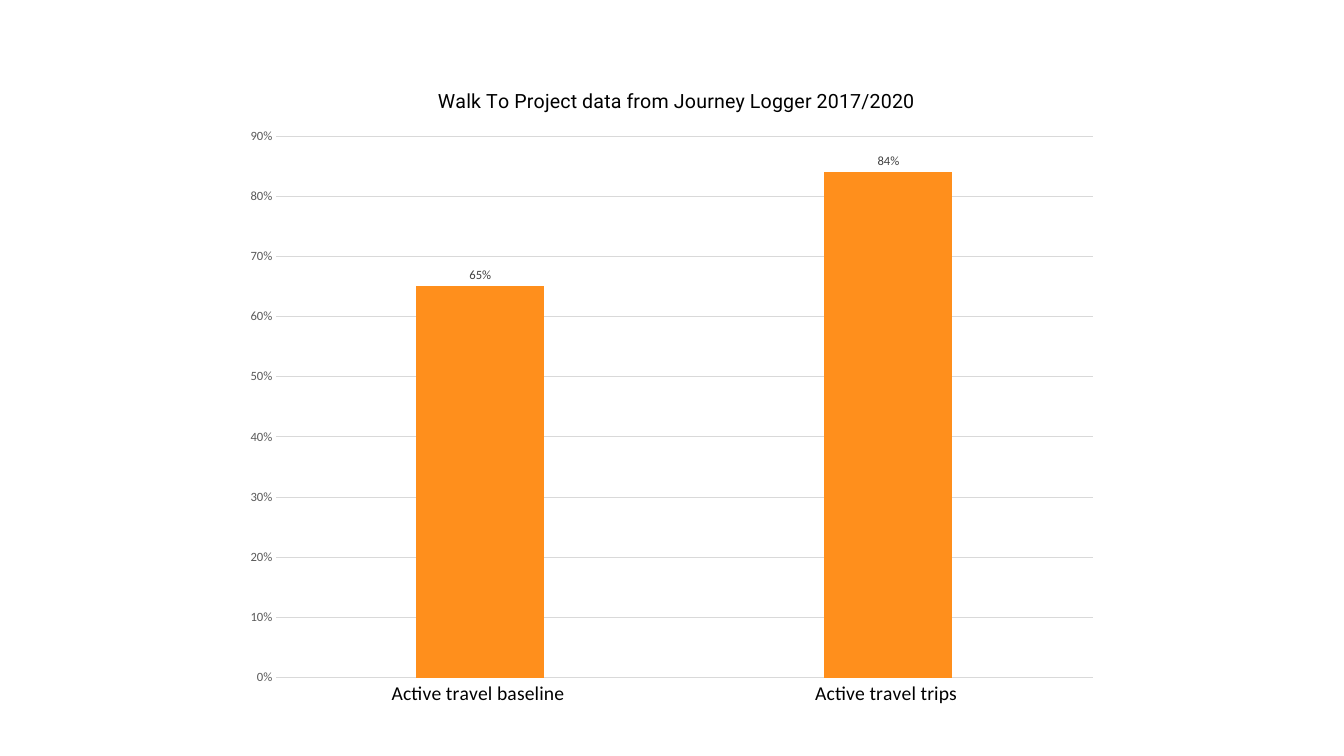
import pptx
import pptx.chart.data
import pptx.dml.color
import pptx.enum.chart
import pptx.oxml
import pptx.oxml.ns
import pptx.util

COLORS = {"bar": "FF8F1C", "grid": "D9D9D9", "text": "000000",
          "scale": "595959", "label": "404040"}


def style_font(font, name, size, color):
    for key, value in {"name": name, "size": pptx.util.Pt(size), "bold": False}.items():
        setattr(font, key, value)
    font.color.rgb = pptx.dml.color.RGBColor.from_string(COLORS[color])


def manual_layout(**fractions):
    """Return a c:layout element placed by fractions of the chart area."""
    target = '<c:layoutTarget val="inner"/>' if "w" in fractions else ""
    places = "".join(f'<c:{key} val="{value}"/>' for key, value in fractions.items())
    return pptx.oxml.parse_xml(
        f'<c:layout {pptx.oxml.ns.nsdecls("c")}><c:manualLayout>{target}'
        f'<c:xMode val="edge"/><c:yMode val="edge"/>{places}'
        "</c:manualLayout></c:layout>")


deck = pptx.Presentation()
deck.slide_width, deck.slide_height = pptx.util.Pt(960), pptx.util.Pt(540)
slide = deck.slides.add_slide(deck.slide_layouts[6])

travel_data = pptx.chart.data.CategoryChartData(number_format="0%")
travel_data.categories = ["Active travel baseline ", "Active travel trips "]
travel_data.add_series("Series 1", [0.65, 0.84])
travel_chart = slide.shapes.add_chart(
    pptx.enum.chart.XL_CHART_TYPE.COLUMN_CLUSTERED,
    pptx.util.Pt(166), pptx.util.Pt(46), pptx.util.Pt(627), pptx.util.Pt(466),
    travel_data).chart
travel_chart.has_legend = False
style_font(travel_chart.font, "Calibri", 10, "text")

# Title
travel_chart.has_title = True
heading = travel_chart.chart_title
heading.include_in_layout = False
heading.text_frame.text = "Walk To Project data from Journey Logger 2017/2020"
style_font(heading.text_frame.paragraphs[0].runs[0].font, "Roboto", 14, "text")
title_xml = heading._element
for old_layout in title_xml.findall(pptx.oxml.ns.qn("c:layout")):
    title_xml.remove(old_layout)
title_xml.find(pptx.oxml.ns.qn("c:tx")).addnext(manual_layout(x=0.23, y=0.03))

# Plot area
plot_area = travel_chart._chartSpace.chart.plotArea
for old_layout in plot_area.findall(pptx.oxml.ns.qn("c:layout")):
    plot_area.remove(old_layout)
plot_area.insert(0, manual_layout(x=0.05, y=0.11, w=0.93, h=0.83))

# Axes
category_axis, share_axis = travel_chart.category_axis, travel_chart.value_axis
style_font(category_axis.tick_labels.font, "Calibri", 14, "text")
style_font(share_axis.tick_labels.font, "Calibri", 9, "scale")
for axis in (category_axis, share_axis):
    axis.major_tick_mark = pptx.enum.chart.XL_TICK_MARK.NONE
    axis.minor_tick_mark = pptx.enum.chart.XL_TICK_MARK.NONE
share_format = {"minimum_scale": 0, "maximum_scale": 0.9, "major_unit": 0.1,
                "has_major_gridlines": True}
for key, value in share_format.items():
    setattr(share_axis, key, value)
share_axis.tick_labels.number_format = "0%"
share_axis.tick_labels.number_format_is_linked = False
share_axis.format.line.fill.background()
for line in (category_axis.format.line, share_axis.major_gridlines.format.line):
    line.width = pptx.util.Pt(0.75)
    line.color.rgb = pptx.dml.color.RGBColor.from_string(COLORS["grid"])

# Bars and their values
bars = travel_chart.plots[0]
bar_format = {"gap_width": 219, "overlap": -27, "vary_by_categories": False}
for key, value in bar_format.items():
    setattr(bars, key, value)
share_series = bars.series[0]
share_series.format.fill.solid()
share_series.format.fill.fore_color.rgb = pptx.dml.color.RGBColor.from_string(COLORS["bar"])
share_labels = share_series.data_labels
label_format = {"show_value": True, "number_format": "0%",
                "number_format_is_linked": False,
                "position": pptx.enum.chart.XL_LABEL_POSITION.OUTSIDE_END}
for key, value in label_format.items():
    setattr(share_labels, key, value)
style_font(share_labels.font, "Calibri", 9, "label")

deck.save("out.pptx")
